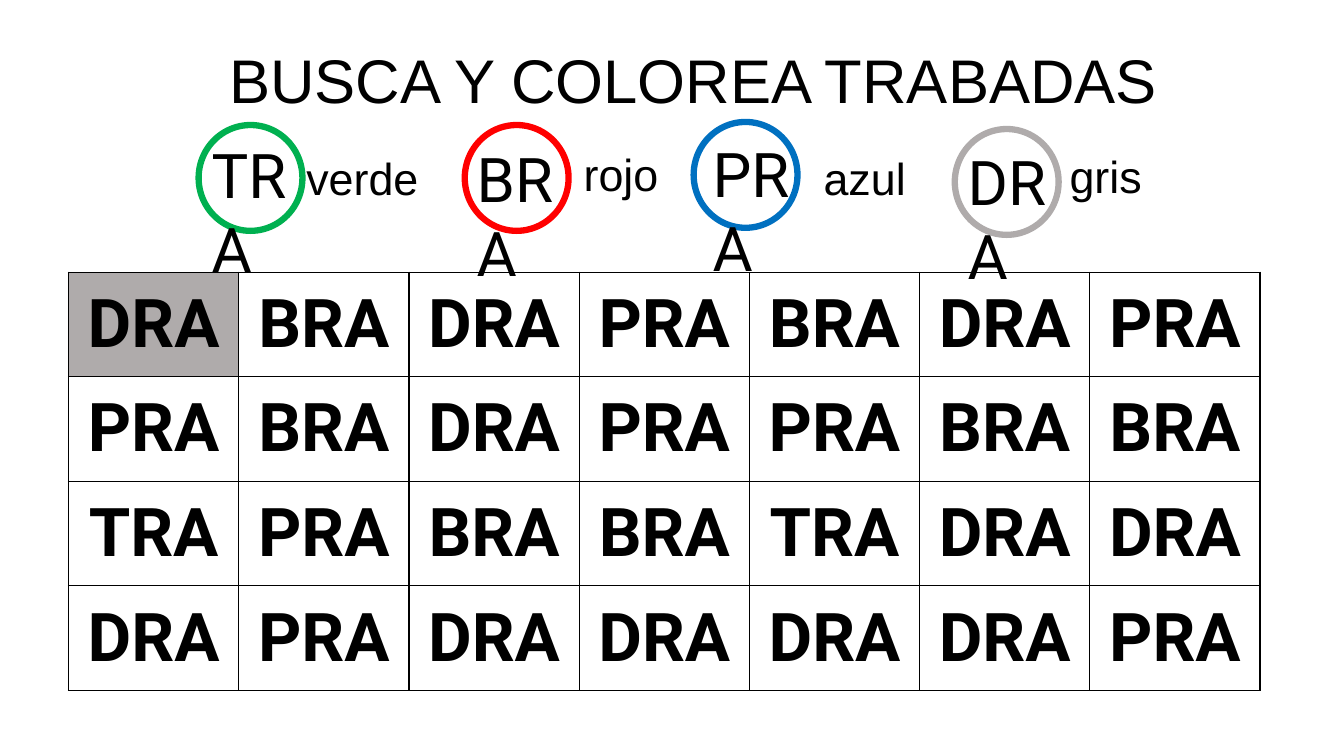
from lxml.etree import SubElement
from pptx import Presentation
from pptx.dml.color import RGBColor
from pptx.enum.shapes import MSO_SHAPE as Preset
from pptx.enum.text import MSO_ANCHOR as Anchor, MSO_AUTO_SIZE as AutoSize, PP_ALIGN as Align
from pptx.oxml.ns import qn
from pptx.util import Inches, Pt

BLACK = RGBColor(0x00, 0x00, 0x00)
WHITE = RGBColor(0xFF, 0xFF, 0xFF)
GREEN = RGBColor(0x00, 0xB0, 0x50)
RED = RGBColor(0xFF, 0x00, 0x00)
BLUE = RGBColor(0x00, 0x70, 0xC0)
GRAY = RGBColor(0xAF, 0xAB, 0xAB)


def write(frame, text, size, font, align=Align.LEFT, bold=False):
    frame.word_wrap = True
    paragraph = frame.paragraphs[0]
    paragraph.alignment = align
    run = paragraph.add_run()
    run.text = text
    run.font.size = Pt(size)
    run.font.name = font
    run.font.bold = bold
    run.font.color.rgb = BLACK


def add_borders(cell):
    properties = cell._tc.get_or_add_tcPr()
    for position, side in enumerate(("lnL", "lnR", "lnT", "lnB")):
        border = properties.makeelement(qn(f"a:{side}"), {"w": str(Pt(1))})
        fill = SubElement(border, qn("a:solidFill"))
        SubElement(fill, qn("a:srgbClr"), val=str(BLACK))
        properties.insert(position, border)


prs = Presentation()
prs.slide_width, prs.slide_height = Inches(13.33), Inches(7.5)
slide = prs.slides.add_slide(prs.slide_layouts[5])

heading = slide.shapes.title
heading.left, heading.top = Inches(0.43), Inches(0.37)
heading.width, heading.height = Inches(12.9), Inches(0.84)
heading.text_frame.auto_size = AutoSize.NONE
heading.text_frame.vertical_anchor = Anchor.TOP
write(heading.text_frame, "BUSCA Y COLOREA TRABADAS", 44, "Arial", Align.CENTER)

syllable_rows = [
    "DRA BRA DRA PRA BRA DRA PRA".split(),
    "PRA BRA DRA PRA PRA BRA BRA".split(),
    "TRA PRA BRA BRA TRA DRA DRA".split(),
    "DRA PRA DRA DRA DRA DRA PRA".split(),
]
grid = slide.shapes.add_table(
    len(syllable_rows), len(syllable_rows[0]),
    Inches(0.68), Inches(2.7), Inches(11.82), Inches(4.15),
).table
grid.first_row = grid.horz_banding = False
for row, syllables in enumerate(syllable_rows):
    for column, syllable in enumerate(syllables):
        cell = grid.cell(row, column)
        cell.vertical_anchor = Anchor.MIDDLE
        cell.fill.solid()
        cell.fill.fore_color.rgb = GRAY if row == column == 0 else WHITE
        add_borders(cell)
        write(cell.text_frame, syllable, 48, "Roboto", Align.CENTER, True)

color_key = [
    ("TRA", (2, 1.31, 1.02), GREEN, (1.97, 1.24), "verde", (2.94, 1.45, 1.7)),
    ("BRA", (4.63, 1.35, 1.04), RED, (4.61, 1.24), "rojo", (5.69, 1.41, 1.19)),
    ("PRA", (6.97, 1.3, 0.97), BLUE, (6.88, 1.21), "azul", (8.07, 1.45, 1.3)),
    ("DRA", (9.5, 1.38, 1.04), GRAY, (9.47, 1.28), "gris", (10.51, 1.43, 1.14)),
]
for syllable, syllable_place, color, (left, top), color_name, name_place in color_key:
    circle = slide.shapes.add_shape(
        Preset.OVAL, Inches(left), Inches(top), Inches(1.03), Inches(1.05))
    circle.shadow.inherit = False
    if color == GRAY:
        circle.fill.solid()
        circle.fill.fore_color.rgb = WHITE
    else:
        circle.fill.background()
    circle.line.color.rgb = color
    circle.line.width = Pt(4.5)
    for text, (x, y, width), height, size, font in (
        (syllable, syllable_place, 0.84, 44, "Roboto"),
        (color_name, name_place, 0.64, 32, "Arial"),
    ):
        label = slide.shapes.add_textbox(Inches(x), Inches(y), Inches(width), Inches(height))
        write(label.text_frame, text, size, font)

prs.save("out.pptx")
